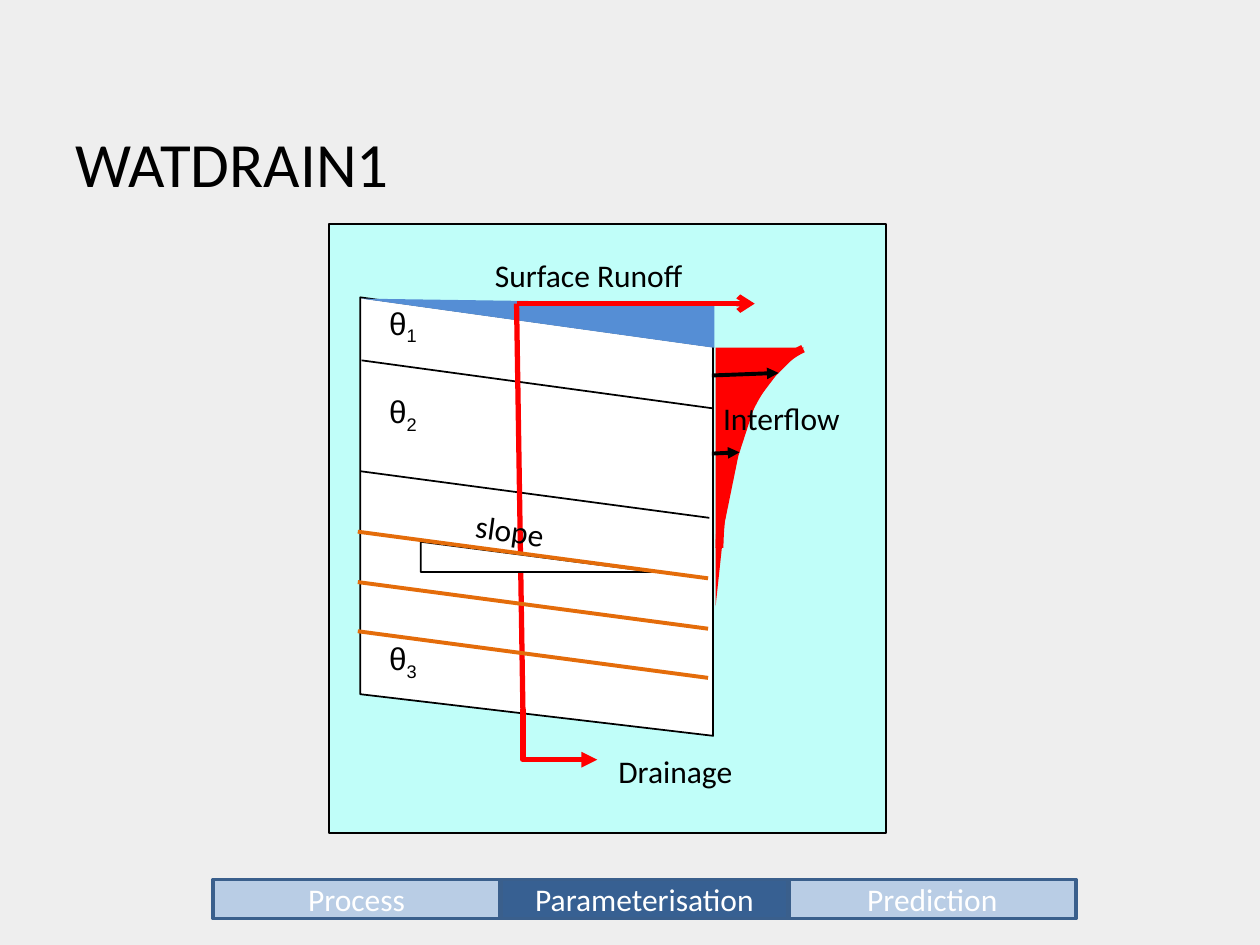
import pptx
import pptx.util
import pptx.dml.color
import pptx.enum.shapes
import pptx.enum.text
import pptx.oxml

Inches, Pt = pptx.util.Inches, pptx.util.Pt
Shape = pptx.enum.shapes.MSO_SHAPE
Text = pptx.enum.text
NS = 'xmlns:a="http://schemas.openxmlformats.org/drawingml/2006/main"'
HEX = {"back": "EEEEEE", "panel": "C0FEF9", "black": "000000", "white": "FFFFFF",
       "red": "FF0000", "water": "558ED5", "orange": "E46C0A",
       "pale": "B9CDE5", "dark": "376092", "edge": "3A5F8C"}
RGB = {name: pptx.dml.color.RGBColor.from_string(code) for name, code in HEX.items()}


def paint(shape, fill=None, line=None, width=1, head=None):
    """Set fill, outline and arrowhead, and drop the shadow."""
    if hasattr(shape, "fill"):
        shape.shadow.inherit = False
        if fill:
            shape.fill.solid()
            shape.fill.fore_color.rgb = RGB[fill]
        else:
            shape.fill.background()
    else:
        shape._element.spPr.append(pptx.oxml.parse_xml(f"<a:effectLst {NS}/>"))
    if line:
        shape.line.color.rgb = RGB[line]
        shape.line.width = Pt(width)
    else:
        shape.line.fill.background()
    if head:
        shape.line._get_or_add_ln().append(
            pptx.oxml.parse_xml(f'<a:tailEnd {NS} type="{head}"/>'))


def trace(points, close=False):
    """Add a freeform through points given in inches."""
    spots = [(Inches(x), Inches(y)) for x, y in points]
    form = shapes.build_freeform(*spots[0])
    form.add_line_segments(spots[1:], close=close)
    return form.convert_to_shape()


deck = pptx.Presentation()
deck.slide_width, deck.slide_height = Inches(10), Inches(7.5)
slide = deck.slides.add_slide(deck.slide_layouts[5])
shapes = slide.shapes
slide.background.fill.solid()
slide.background.fill.fore_color.rgb = RGB["back"]

# Title
title = shapes.title
title.left, title.top = Inches(0.5), Inches(0.39)
title.width, title.height = Inches(9), Inches(1.25)
title.text_frame.text = "WATDRAIN1"
title.text_frame.vertical_anchor = Text.MSO_ANCHOR.BOTTOM
para = title.text_frame.paragraphs[0]
para.alignment = Text.PP_ALIGN.LEFT
para.font.size, para.font.name = Pt(36), "Calibri"
para.font.color.rgb = RGB["black"]

# Panel and soil block
panel = shapes.add_shape(Shape.RECTANGLE, Inches(2.61), Inches(1.78),
                         Inches(4.42), Inches(4.83))
paint(panel, "panel", "black")
paint(trace([(2.86, 5.51), (2.86, 2.36), (5.66, 2.75), (5.66, 5.84)], True),
      "white", "black")

# Water, slope wedge, interflow profile and drain path
paint(trace([(2.87, 2.37), (5.67, 2.76), (5.67, 2.41)], True), "water")
paint(trace([(3.34, 4.3), (3.34, 4.54), (5.2, 4.54)], True), "white", "black")
paint(trace([(6.38, 2.76), (5.68, 2.76), (5.68, 4.81), (5.75, 4.16),
             (5.86, 3.62), (6, 3.19), (6.16, 2.98)], True), "red")
paint(trace([(4.15, 5.63), (4.15, 6.03), (4.74, 6.03)]),
      None, "red", 3, "triangle")
arc = shapes.add_shape(Shape.ARC, Inches(4.88), Inches(3.55),
                       Inches(3.39), Inches(1.73))
arc.rotation = 270
arc.adjustments[0], arc.adjustments[1] = 164.66, 211.83
paint(arc, None, "red", 4.5)

# Layer bounds, flows and water tables
lines = [
    (2.87, 2.86, 5.65, 3.24, "black", 1, None),
    (2.86, 3.74, 5.63, 4.11, "black", 1, None),
    (4.1, 2.41, 5.99, 2.41, "red", 3, "arrow"),
    (4.15, 5.63, 4.1, 2.41, "red", 3, None),
    (5.65, 2.98, 6.18, 2.96, "black", 2.25, "triangle"),
    (5.65, 3.6, 5.87, 3.59, "black", 2.25, "triangle"),
]
lines += [(2.84, y, 5.62, y + 0.37, "orange", 2.25, None)
          for y in (4.22, 4.62, 5.01)]
for x1, y1, x2, y2, tint, width, head in lines:
    link = shapes.add_connector(pptx.enum.shapes.MSO_CONNECTOR.STRAIGHT,
                                Inches(x1), Inches(y1), Inches(x2), Inches(y2))
    paint(link, None, tint, width, head)
    if y1 == 5.63:  # the wedge hides part of the drain line
        wedge = [s for s in shapes if s.left == Inches(3.34)][0]
        link._element.addnext(wedge._element)

# Labels: words, subscript, place, size, turn, font
labels = [
    ("θ", "1", 2.99, 2.36, 0.46, 0.51, 0, "Arial"),
    ("θ", "2", 2.99, 3.06, 0.46, 0.51, 0, "Arial"),
    ("θ", "3", 2.99, 5.02, 0.46, 0.51, 0, "Arial"),
    ("Surface Runoff", "", 3.83, 1.98, 2.24, 0.5, 0, "Calibri"),
    ("Drainage", "", 4.81, 5.92, 1.43, 0.51, 0, "Calibri"),
    ("slope", "", 3.67, 4.02, 0.9, 0.5, 8, "Calibri"),
    ("Interflow", "", 5.64, 3.12, 1.44, 0.5, 0, "Calibri"),
]
for words, sub, x, y, w, h, turn, face in labels:
    box = shapes.add_textbox(Inches(x), Inches(y), Inches(w), Inches(h))
    box.rotation = turn
    box.text_frame.word_wrap = False
    box.text_frame.auto_size = Text.MSO_AUTO_SIZE.SHAPE_TO_FIT_TEXT
    para = box.text_frame.paragraphs[0]
    para.add_run().text = words
    if sub:
        run = para.add_run()
        run.text = sub
        run.font._element.set("baseline", "-25000")
    para.font.size, para.font.name = Pt(18), face
    para.font.color.rgb = RGB["black"]

# Step bar
steps = [("Process", "pale"), ("Parameterisation", "dark"), ("Prediction", "pale")]
for i, (step, tint) in enumerate(steps):
    bar = shapes.add_shape(Shape.RECTANGLE, Inches(1.69 + i * 2.285), Inches(6.98),
                           Inches(2.28), Inches(0.31))
    paint(bar, tint, "edge", 2)
    bar.text_frame.text = step
    bar.text_frame.vertical_anchor = Text.MSO_ANCHOR.MIDDLE
    para = bar.text_frame.paragraphs[0]
    para.alignment = Text.PP_ALIGN.CENTER
    para.font.size, para.font.name = Pt(18), "Calibri"
    para.font.color.rgb = RGB["white"]

deck.save("out.pptx")
